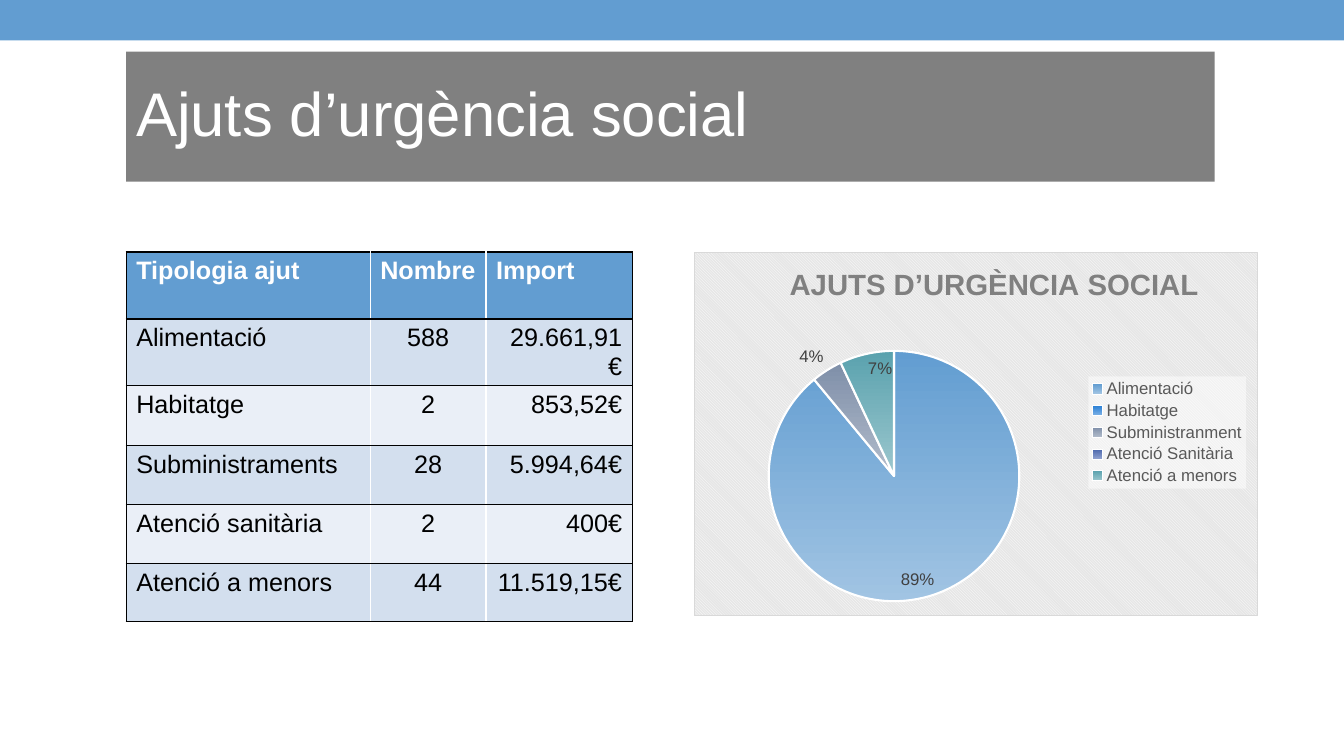
from lxml.etree import SubElement
from pptx import Presentation
from pptx.chart.data import CategoryChartData
from pptx.dml.color import RGBColor
from pptx.enum.chart import XL_CHART_TYPE as ChartType
from pptx.enum.chart import XL_LABEL_POSITION as LabelPos
from pptx.enum.chart import XL_LEGEND_POSITION as LegendPos
from pptx.enum.shapes import MSO_SHAPE as Shape
from pptx.enum.text import MSO_ANCHOR as Anchor
from pptx.enum.text import PP_ALIGN as Align
from pptx.oxml import parse_xml
from pptx.oxml.ns import nsdecls, qn
from pptx.util import Cm, Pt

WHITE = RGBColor(0xFF, 0xFF, 0xFF)
BLACK = RGBColor(0, 0, 0)
BLUE = RGBColor(0x62, 0x9D, 0xD1)
GREY = RGBColor(0x80, 0x80, 0x80)
LEGEND_GREY = RGBColor(0x59, 0x59, 0x59)
LABEL_GREY = RGBColor(0x40, 0x40, 0x40)
BANDS = (RGBColor(0xEA, 0xEF, 0xF7), RGBColor(0xD3, 0xDF, 0xEE))
GRADIENTS = (
    (BLUE, RGBColor(0xA1, 0xC4, 0xE3)),
    (RGBColor(0x29, 0x7F, 0xD5), RGBColor(0x7E, 0xB2, 0xE6)),
    (RGBColor(0x7F, 0x8F, 0xA9), RGBColor(0xB2, 0xBC, 0xCB)),
    (RGBColor(0x4A, 0x66, 0xAC), RGBColor(0x90, 0xA2, 0xCF)),
    (RGBColor(0x5A, 0xA2, 0xAE), RGBColor(0x9C, 0xC7, 0xCE)),
)
ROWS = (
    ("Tipologia ajut", "Nombre", "Import"),
    ("Alimentació", "588", "29.661,91€"),
    ("Habitatge", "2", "853,52€"),
    ("Subministraments", "28", "5.994,64€"),
    ("Atenció sanitària", "2", "400€"),
    ("Atenció a menors", "44", "11.519,15€"),
)
COLUMN_WIDTHS = (6.15, 2.92, 3.68)
ROW_HEIGHTS = (1.69, 1.45, 1.51, 1.48, 1.49, 1.47)
ALIGNMENTS = (Align.LEFT, Align.CENTER, Align.RIGHT)
SHARES = {"Alimentació": 89, "Habitatge": 0, "Subministranment": 4,
          "Atenció Sanitària": 0, "Atenció a menors": 7}
LABEL_POSITIONS = (LabelPos.INSIDE_END, LabelPos.OUTSIDE_END, LabelPos.OUTSIDE_END,
                   LabelPos.OUTSIDE_END, LabelPos.INSIDE_END)


def set_font(font, size, color, bold=False):
    font.name = "Arial"
    font.size = Pt(size)
    font.color.rgb = color
    font.bold = bold


def write(para, text, size=18, color=BLACK, bold=False, align=Align.LEFT, spacing=None):
    span = para.add_run()
    span.text = text
    set_font(span.font, size, color, bold)
    para.alignment = align
    if spacing:
        para.line_spacing = spacing


def add_band(page, box, color):
    band = page.shapes.add_shape(Shape.RECTANGLE, *map(Cm, box))
    band.shadow.inherit = False
    band.fill.solid()
    band.fill.fore_color.rgb = color
    band.line.fill.background()
    return band


def add_heading(page, box):
    frame = add_band(page, box, GREY).text_frame
    frame.word_wrap = True
    frame.vertical_anchor = Anchor.MIDDLE
    write(frame.paragraphs[0], "Ajuts d’urgència social", size=44, color=WHITE, spacing=0.9)


def set_borders(cell, **sides):
    properties = cell._tc.get_or_add_tcPr()
    for index, (side, color) in enumerate(sides.items()):
        properties.insert(index, parse_xml(
            f'<a:ln{side} {nsdecls("a")} w="12700"><a:solidFill>'
            f'<a:srgbClr val="{color}"/></a:solidFill></a:ln{side}>'))


def add_aid_table(page, box):
    table = page.shapes.add_table(len(ROWS), len(COLUMN_WIDTHS), *map(Cm, box)).table
    for column, width in zip(table.columns, COLUMN_WIDTHS):
        column.width = Cm(width)
    last = len(COLUMN_WIDTHS) - 1
    for r, (row, height) in enumerate(zip(ROWS, ROW_HEIGHTS)):
        table.rows[r].height = Cm(height)
        for c, text in enumerate(row):
            cell = table.cell(r, c)
            header = r == 0
            cell.fill.solid()
            cell.fill.fore_color.rgb = BLUE if header else BANDS[r % 2]
            write(cell.text_frame.paragraphs[0], text, bold=header,
                  color=WHITE if header else BLACK,
                  align=Align.LEFT if header else ALIGNMENTS[c])
            set_borders(cell, L=BLACK if c == 0 else WHITE,
                        R=BLACK if c == last else WHITE, T=BLACK, B=BLACK)


def make_layout(x, y, width=None, height=None, inner=False, offset=False):
    layout = parse_xml(f'<c:layout {nsdecls("c")}><c:manualLayout/></c:layout>')
    values = {}
    if inner:
        values["layoutTarget"] = "inner"
    if not offset:
        values.update(xMode="edge", yMode="edge")
    values.update(x=x, y=y)
    if width:
        values.update(w=width, h=height)
    for name, value in values.items():
        SubElement(layout[0], qn(f"c:{name}")).set("val", str(value))
    return layout


def place(element, layout, after=None):
    for old in element.findall(qn("c:layout")):
        element.remove(old)
    if after is None:
        element.insert(0, layout)
    else:
        element.find(qn(after)).addnext(layout)


def style_slices(series):
    labels = series.data_labels
    labels.show_percentage = True
    labels.show_value = False
    set_font(labels.font, 12, LABEL_GREY)
    for index, (colors, position) in enumerate(zip(GRADIENTS, LABEL_POSITIONS)):
        point = series.points[index]
        fill = point.format.fill
        fill.gradient()
        fill.gradient_angle = 270
        for stop, color in zip(fill.gradient_stops, colors):
            stop.color.rgb = color
        point.format.line.color.rgb = WHITE
        point.format.line.width = Pt(1.5)
        set_font(point.data_label.font, 12, LABEL_GREY)
        point.data_label.position = position
    for label in series._element.iter(qn("c:dLbl")):
        label.find(qn("c:showVal")).set("val", "0")
        label.find(qn("c:showPercent")).set("val", "1")
        if label.find(qn("c:idx")).get("val") == "1":
            place(label, make_layout(-0.03, 0.02, offset=True), after="c:idx")


def add_aid_chart(page, box):
    data = CategoryChartData()
    data.categories = list(SHARES)
    data.add_series("Series 1", list(SHARES.values()))
    chart = page.shapes.add_chart(ChartType.PIE, *map(Cm, box), data).chart
    set_font(chart.font, 10, BLACK)
    chart.has_title = True
    write(chart.chart_title.text_frame.paragraphs[0], "AJUTS D’URGÈNCIA SOCIAL",
          size=21, color=GREY, bold=True, align=Align.CENTER)
    place(chart.chart_title._element, make_layout(0.16, 0.02), after="c:tx")
    chart.has_legend = True
    legend = chart.legend
    legend.position = LegendPos.RIGHT
    legend.include_in_layout = False
    set_font(legend.font, 12, LEGEND_GREY)
    place(legend._element, make_layout(0.7, 0.34, 0.28, 0.31), after="c:legendPos")
    legend._element.find(qn("c:txPr")).addprevious(parse_xml(
        f'<c:spPr {nsdecls("c", "a")}><a:solidFill><a:srgbClr val="{WHITE}">'
        '<a:alpha val="50000"/></a:srgbClr></a:solidFill></c:spPr>'))
    plot = chart.plots[0]
    plot.vary_by_categories = True
    style_slices(plot.series[0])
    space = chart._chartSpace
    place(space.chart.plotArea, make_layout(0.13, 0.27, 0.45, 0.69, inner=True))
    space.chart.addnext(parse_xml(
        f'<c:spPr {nsdecls("c", "a")}><a:pattFill prst="dkDnDiag">'
        f'<a:fgClr><a:srgbClr val="{WHITE}"/></a:fgClr>'
        '<a:bgClr><a:srgbClr val="E6E6E6"/></a:bgClr></a:pattFill>'
        '<a:ln w="9525"><a:solidFill><a:srgbClr val="D9D9D9"/></a:solidFill></a:ln></c:spPr>'))


def main():
    deck = Presentation()
    deck.slide_width, deck.slide_height = Cm(33.87), Cm(19.05)
    page = deck.slides.add_slide(deck.slide_layouts[6])
    add_band(page, (0, 0, 33.87, 1.02), BLUE)
    add_heading(page, (3.18, 1.3, 27.43, 3.28))
    add_aid_table(page, (3.18, 6.35, sum(COLUMN_WIDTHS), sum(ROW_HEIGHTS)))
    add_aid_chart(page, (17.48, 6.36, 14.22, 9.17))
    deck.save("out.pptx")


if __name__ == "__main__":
    main()
